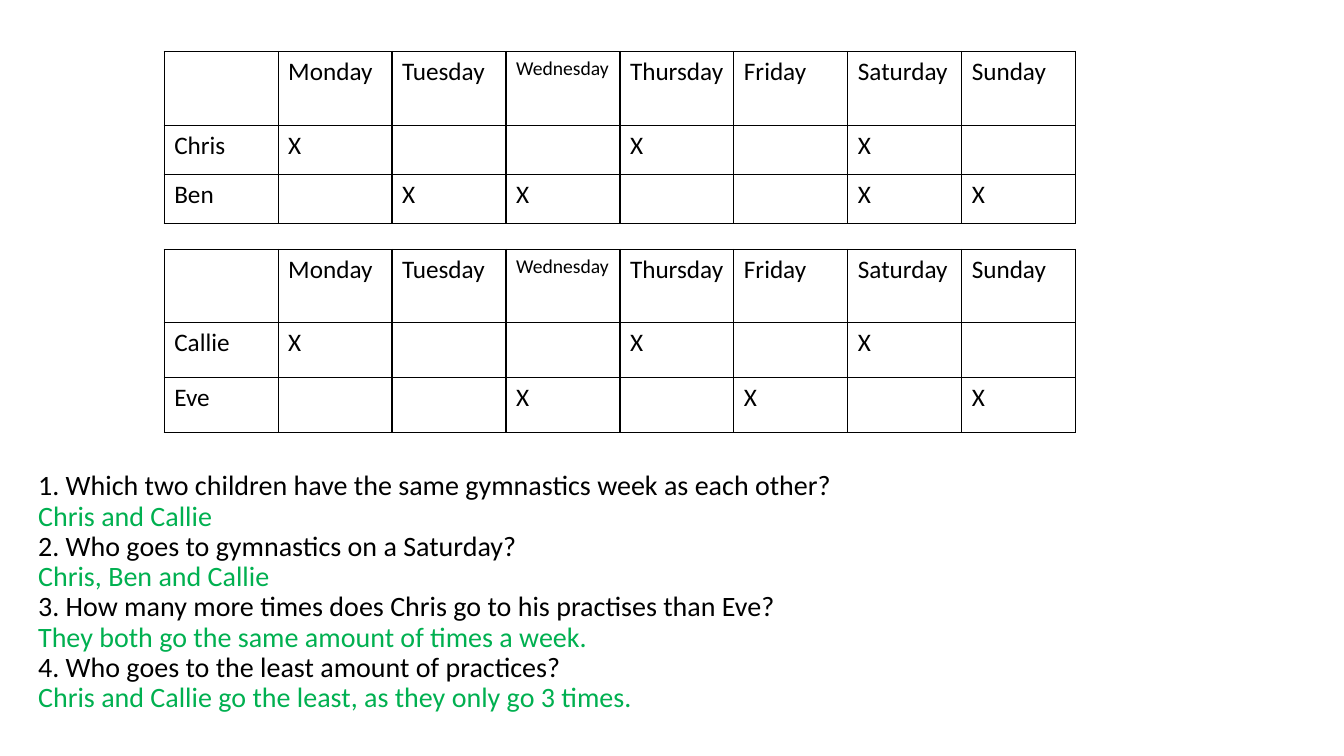
from dataclasses import dataclass

from lxml import etree
from pptx import Presentation
from pptx.dml.color import RGBColor
from pptx.enum.text import MSO_ANCHOR
from pptx.oxml.ns import qn
from pptx.util import Inches, Pt

BOTTOM = MSO_ANCHOR.BOTTOM
BORDER_SIDES = ("a:lnL", "a:lnR", "a:lnT", "a:lnB")


@dataclass(frozen=True)
class Theme:
    font: str = "Calibri"
    ink: str = "000000"
    answer: str = "00B050"
    table_size: int = 18
    long_day_size: int = 14
    question_size: int = 20
    border_width: int = 1


DAYS = ["Monday", "Tuesday", "Wednesday", "Thursday", "Friday", "Saturday", "Sunday"]

BOYS = {
    "Chris": ["Monday", "Thursday", "Saturday"],
    "Ben": ["Tuesday", "Wednesday", "Saturday", "Sunday"],
}
GIRLS = {
    "Callie": ["Monday", "Thursday", "Saturday"],
    "Eve": ["Wednesday", "Friday", "Sunday"],
}

QUESTIONS = [
    ("1. Which two children have the same gymnastics week as each other?", "Chris and Callie"),
    ("2. Who goes to gymnastics on a Saturday?", "Chris, Ben and Callie"),
    ("3. How many more times does Chris go to his practises than Eve?",
     "They both go the same amount of times a week."),
    ("4. Who goes to the least amount of practices?",
     "Chris and Callie go the least, as they only go 3 times."),
]


def write(paragraph, text, *, font, size, color, spacing=None):
    run = paragraph.add_run()
    run.text = text
    run.font.name = font
    run.font.size = Pt(size)
    run.font.color.rgb = RGBColor.from_string(color)
    if spacing:
        paragraph.line_spacing = spacing


class GymnasticsSlide:
    def __init__(self, deck, theme):
        self.theme = theme
        self.slide = deck.slides.add_slide(deck.slide_layouts[6])
        self.column = deck.slide_width / 100
        self.row = deck.slide_height / 100

    def place(self, left, top, width, height):
        return (round(left * self.column), round(top * self.row),
                round(width * self.column), round(height * self.row))

    def outline(self, cell):
        properties = cell._tc.get_or_add_tcPr()
        for side in BORDER_SIDES:
            line = etree.SubElement(properties, qn(side), w=str(Pt(self.theme.border_width)))
            fill = etree.SubElement(line, qn("a:solidFill"))
            etree.SubElement(fill, qn("a:srgbClr"), val=self.theme.ink)

    def timetable(self, practices, left, top, width, header_height, child_height):
        theme = self.theme
        heights = [header_height] + [child_height] * len(practices)
        entries = [[""] + DAYS]
        for child, attended in practices.items():
            entries.append([child] + ["X" if day in attended else "" for day in DAYS])

        week = self.slide.shapes.add_table(
            len(entries), len(entries[0]), *self.place(left, top, width, sum(heights))).table
        week.first_row = False
        week.horz_banding = False
        for week_row, height, texts in zip(week.rows, heights, entries):
            week_row.height = round(height * self.row)
            for cell, text in zip(week_row.cells, texts):
                self.outline(cell)
                cell.fill.background()
                cell.margin_right = Inches(0.05)
                size = theme.long_day_size if text == "Wednesday" else theme.table_size
                if text:
                    write(cell.text_frame.paragraphs[0], text,
                          font=theme.font, size=size, color=theme.ink)

    def questions(self, pairs, left, top, width, height):
        theme = self.theme
        frame = self.slide.shapes.add_textbox(*self.place(left, top, width, height)).text_frame
        frame.word_wrap = True
        frame.vertical_anchor = BOTTOM
        lines = [line for question, answer in pairs
                 for line in ((question, theme.ink), (answer, theme.answer))]
        for index, (text, color) in enumerate(lines):
            paragraph = frame.add_paragraph() if index else frame.paragraphs[0]
            write(paragraph, text, font=theme.font, size=theme.question_size,
                  color=color, spacing=0.9)


def main():
    deck = Presentation()
    deck.slide_width = Inches(13.33)
    deck.slide_height = Inches(7.5)
    page = GymnasticsSlide(deck, Theme())
    page.timetable(BOYS, left=12.22, top=6.8, width=67.82, header_height=9.8, child_height=6.5)
    page.timetable(GIRLS, left=12.22, top=33, width=67.82, header_height=9.65, child_height=7.27)
    page.questions(QUESTIONS, left=2.1, top=45.73, width=89.87, height=49.33)
    deck.save("out.pptx")


if __name__ == "__main__":
    main()
